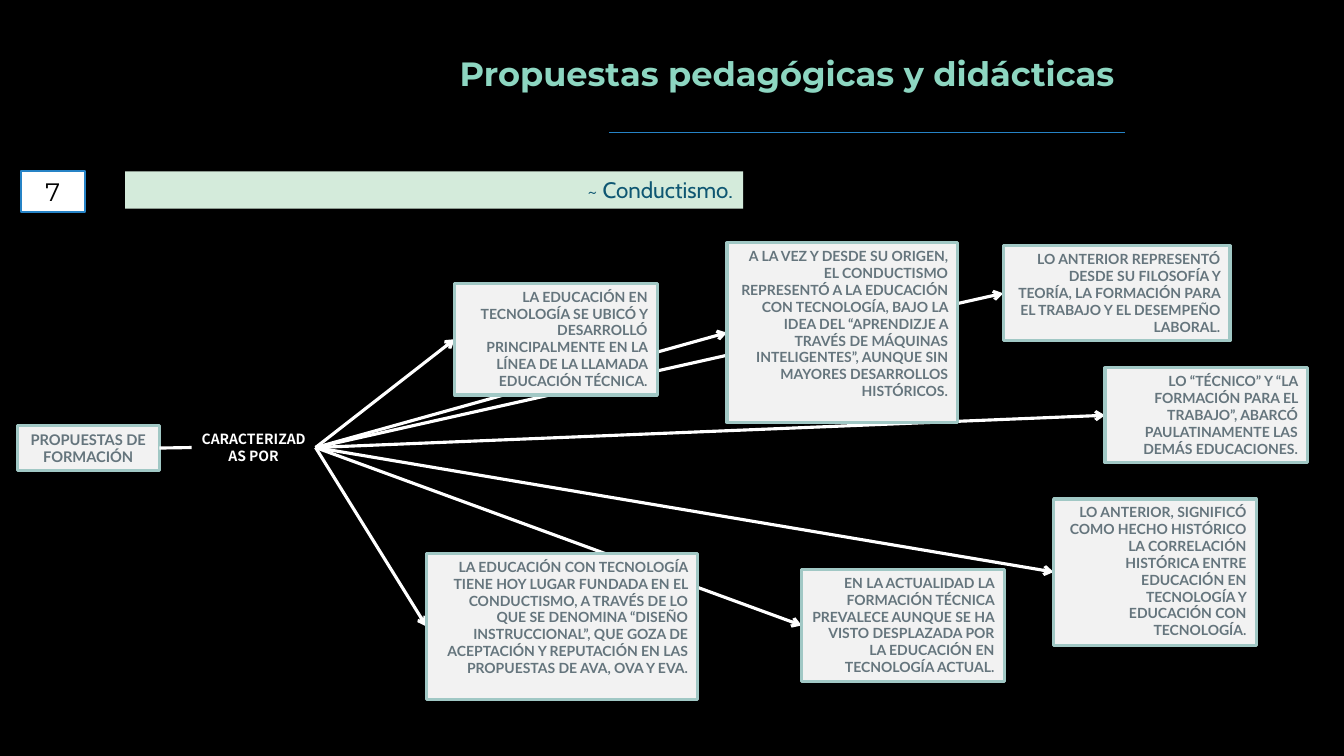
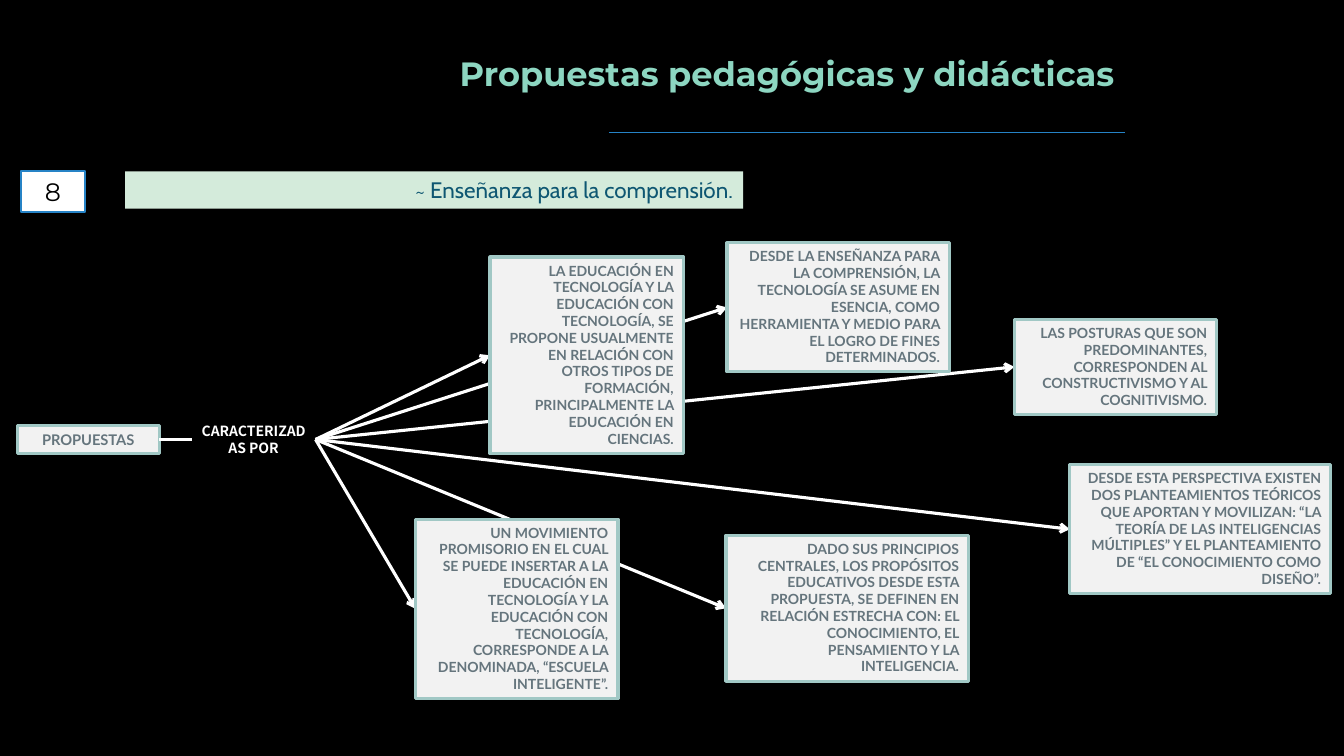
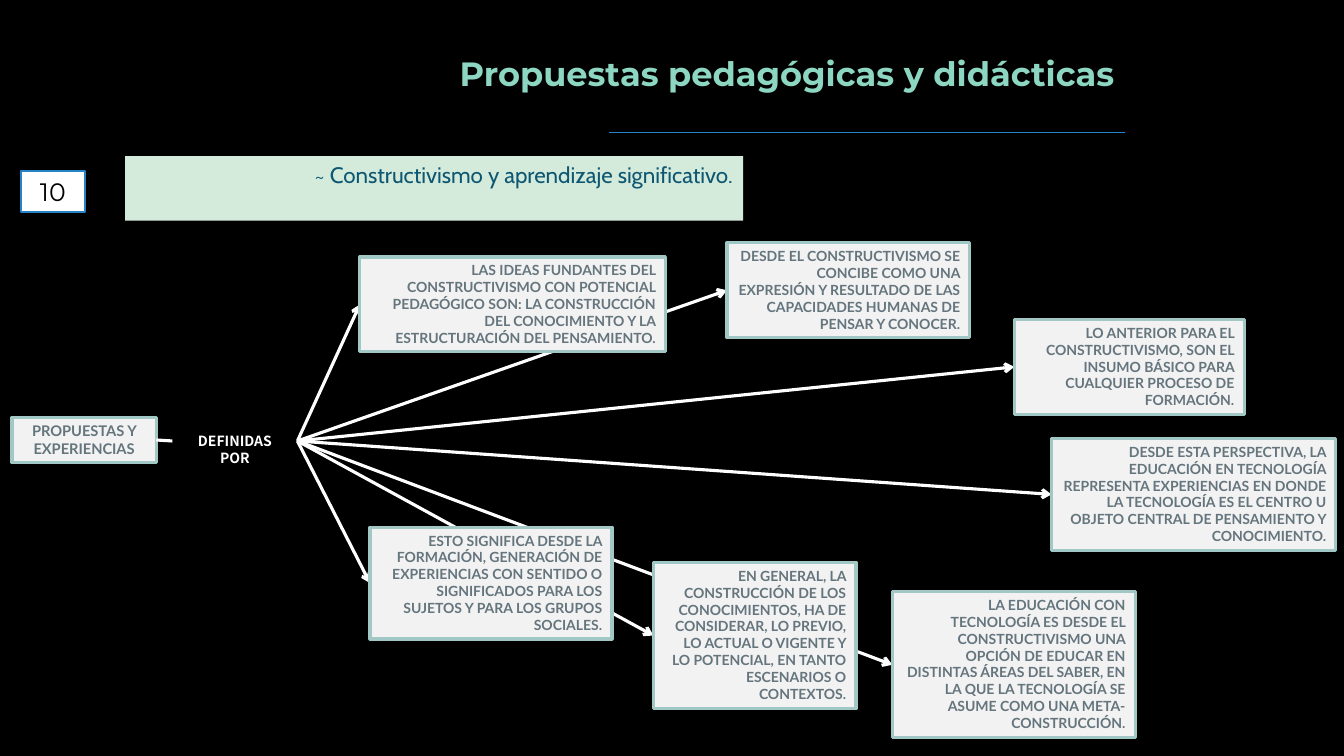
from dataclasses import dataclass
from typing import Optional

from lxml.etree import SubElement
from pptx import Presentation
from pptx.dml.color import RGBColor
from pptx.enum.shapes import MSO_CONNECTOR as Connector, MSO_SHAPE as Preset
from pptx.enum.text import MSO_ANCHOR as Anchor, PP_ALIGN as Align
from pptx.oxml.ns import qn
from pptx.util import Inches, Pt

COLORS = {
    "background": "000000", "title": "8DD6C1", "accent": "2683C6",
    "banner": "D4EBDB", "banner_text": "0E5772", "white": "FFFFFF",
    "black": "000000", "card": "F2F2F2", "card_line": "A1C8C5",
    "card_text": "65757D",
}


@dataclass(frozen=True)
class Box:
    left: float
    top: float
    width: float
    height: float


@dataclass(frozen=True)
class TextStyle:
    font: str
    size: float
    color: str
    bold: bool = False
    align: Align = Align.RIGHT
    leading: Optional[float] = None


@dataclass(frozen=True)
class Look:
    fill: str
    line: Optional[str] = None
    weight: float = 0


@dataclass(frozen=True)
class Label:
    text: str
    box: Box


@dataclass(frozen=True)
class MapSlide:
    number: str
    banner: Label
    root: Label
    hub: Label
    cards: tuple[Label, ...]


TITLE = Label("Propuestas pedagógicas y didácticas", Box(2.12, 0.48, 9.03, 0.5))
NUMBER_BOX = Box(0.21, 1.7, 0.63, 0.4)
BANNER_BOX = Box(1.24, 1.7, 6.13, 0.37)

TITLE_STYLE = TextStyle("Montserrat", 24, "title", True)
BANNER_STYLE = TextStyle("Cabin", 16, "banner_text")
NUMBER_STYLE = TextStyle("Montserrat", 18, "black", align=Align.CENTER)
ROOT_STYLE = TextStyle("Lato", 10.5, "card_text", True, Align.CENTER)
CARD_STYLE = TextStyle("Lato", 10, "card_text", True)
HUB_STYLE = TextStyle("Noto Sans CJK SC", 10, "white", True, Align.CENTER, 12)

BANNER_LOOK = Look("banner")
NUMBER_LOOK = Look("white", "accent", 1.5)
CARD_LOOK = Look("card", "card_line", 2.25)

SLIDES = (
    MapSlide(
        "7",
        Label("~ Conductismo.", BANNER_BOX),
        Label("PROPUESTAS DE FORMACIÓN", Box(0.17, 4.22, 1.41, 0.45)),
        Label("CARACTERIZADAS POR", Box(1.9, 4.22, 1.23, 0.44)),
        (
            Label("LA EDUCACIÓN EN TECNOLOGÍA SE UBICÓ Y DESARROLLÓ PRINCIPALMENTE "
                  "EN LA LÍNEA DE LA LLAMADA EDUCACIÓN TÉCNICA.",
                  Box(4.51, 2.81, 2.01, 1.11)),
            Label("A LA VEZ Y DESDE SU ORIGEN, EL CONDUCTISMO REPRESENTÓ A LA "
                  "EDUCACIÓN CON TECNOLOGÍA, BAJO LA IDEA DEL “APRENDIZJE A TRAVÉS "
                  "DE MÁQUINAS INTELIGENTES”, AUNQUE SIN MAYORES DESARROLLOS "
                  "HISTÓRICOS.", Box(7.21, 2.41, 2.29, 1.78)),
            Label("LO ANTERIOR REPRESENTÓ DESDE SU FILOSOFÍA Y TEORÍA, LA FORMACIÓN "
                  "PARA EL TRABAJO Y EL DESEMPEÑO LABORAL.",
                  Box(9.95, 2.44, 2.25, 0.94)),
            Label("LO “TÉCNICO” Y “LA FORMACIÓN PARA EL TRABAJO”, ABARCÓ "
                  "PAULATINAMENTE LAS DEMÁS EDUCACIONES.",
                  Box(10.96, 3.65, 2.01, 0.94)),
            Label("LO ANTERIOR, SIGNIFICÓ COMO HECHO HISTÓRICO LA CORRELACIÓN "
                  "HISTÓRICA ENTRE EDUCACIÓN EN TECNOLOGÍA Y EDUCACIÓN CON "
                  "TECNOLOGÍA.", Box(10.45, 4.95, 2.01, 1.45)),
            Label("EN LA ACTUALIDAD LA FORMACIÓN TÉCNICA PREVALECE AUNQUE SE HA "
                  "VISTO DESPLAZADA POR LA EDUCACIÓN EN TECNOLOGÍA ACTUAL.",
                  Box(7.95, 5.65, 2.01, 1.11)),
            Label("LA EDUCACIÓN CON TECNOLOGÍA TIENE HOY LUGAR FUNDADA EN EL "
                  "CONDUCTISMO, A TRAVÉS DE LO QUE SE DENOMINA “DISEÑO "
                  "INSTRUCCIONAL”, QUE GOZA DE ACEPTACIÓN Y REPUTACIÓN EN LAS "
                  "PROPUESTAS DE AVA, OVA Y EVA.", Box(4.23, 5.49, 2.69, 1.45)),
        ),
    ),
    MapSlide(
        "8",
        Label("~ Enseñanza para la comprensión.", BANNER_BOX),
        Label("PROPUESTAS", Box(0.17, 4.22, 1.41, 0.28)),
        Label("CARACTERIZADAS POR", Box(1.9, 4.14, 1.23, 0.44)),
        (
            Label("LA EDUCACIÓN EN TECNOLOGÍA Y LA EDUCACIÓN CON TECNOLOGÍA, SE "
                  "PROPONE USUALMENTE EN RELACIÓN CON OTROS TIPOS DE FORMACIÓN, "
                  "PRINCIPALMENTE LA EDUCACIÓN EN CIENCIAS.",
                  Box(4.86, 2.55, 1.92, 1.95)),
            Label("DESDE LA ENSEÑANZA PARA LA COMPRENSIÓN, LA TECNOLOGÍA SE ASUME "
                  "EN ESENCIA, COMO HERRAMIENTA Y MEDIO PARA EL LOGRO DE FINES "
                  "DETERMINADOS.", Box(7.21, 2.41, 2.21, 1.28)),
            Label("LAS POSTURAS QUE SON PREDOMINANTES, CORRESPONDEN AL "
                  "CONSTRUCTIVISMO Y AL COGNITIVISMO.",
                  Box(10.06, 3.17, 2.01, 0.94)),
            Label("DESDE ESTA PERSPECTIVA EXISTEN DOS PLANTEAMIENTOS TEÓRICOS QUE "
                  "APORTAN Y MOVILIZAN: “LA TEORÍA DE LAS INTELIGENCIAS MÚLTIPLES” "
                  "Y EL PLANTEAMIENTO DE “EL CONOCIMIENTO COMO DISEÑO”.",
                  Box(10.61, 4.61, 2.59, 1.28)),
            Label("UN MOVIMIENTO PROMISORIO EN EL CUAL SE PUEDE INSERTAR A LA "
                  "EDUCACIÓN EN TECNOLOGÍA Y LA EDUCACIÓN CON TECNOLOGÍA, "
                  "CORRESPONDE A LA DENOMINADA, “ESCUELA INTELIGENTE”.",
                  Box(4.12, 5.15, 2.01, 1.78)),
            Label("DADO SUS PRINCIPIOS CENTRALES, LOS PROPÓSITOS EDUCATIVOS DESDE "
                  "ESTA PROPUESTA, SE DEFINEN EN RELACIÓN ESTRECHA CON: EL "
                  "CONOCIMIENTO, EL PENSAMIENTO Y LA INTELIGENCIA.",
                  Box(7.2, 5.31, 2.41, 1.45)),
        ),
    ),
    MapSlide(
        "10",
        Label("~ Constructivismo y aprendizaje significativo.",
              Box(1.24, 1.55, 6.13, 0.64)),
        Label("PROPUESTAS Y EXPERIENCIAS", Box(0.12, 4.14, 1.43, 0.45)),
        Label("DEFINIDAS POR", Box(1.71, 4.24, 1.24, 0.27)),
        (
            Label("LAS IDEAS FUNDANTES DEL CONSTRUCTIVISMO CON POTENCIAL PEDAGÓGICO "
                  "SON: LA CONSTRUCCIÓN DEL CONOCIMIENTO Y LA ESTRUCTURACIÓN DEL "
                  "PENSAMIENTO.", Box(3.57, 2.55, 3.03, 0.94)),
            Label("DESDE EL CONSTRUCTIVISMO SE CONCIBE COMO UNA EXPRESIÓN Y "
                  "RESULTADO DE LAS CAPACIDADES HUMANAS DE PENSAR Y CONOCER.",
                  Box(7.21, 2.41, 2.41, 0.94)),
            Label("LO ANTERIOR PARA EL CONSTRUCTIVISMO, SON EL INSUMO BÁSICO PARA "
                  "CUALQUIER PROCESO DE FORMACIÓN.", Box(10.06, 3.17, 2.28, 0.94)),
            Label("DESDE ESTA PERSPECTIVA, LA EDUCACIÓN EN TECNOLOGÍA REPRESENTA "
                  "EXPERIENCIAS EN DONDE LA TECNOLOGÍA ES EL CENTRO U OBJETO "
                  "CENTRAL DE PENSAMIENTO Y CONOCIMIENTO.",
                  Box(10.43, 4.35, 2.82, 1.11)),
            Label("EN GENERAL, LA CONSTRUCCIÓN DE LOS CONOCIMIENTOS, HA DE "
                  "CONSIDERAR, LO PREVIO, LO ACTUAL O VIGENTE Y LO POTENCIAL, EN "
                  "TANTO ESCENARIOS O CONTEXTOS.", Box(6.48, 5.58, 2.01, 1.45)),
            Label("LA EDUCACIÓN CON TECNOLOGÍA ES DESDE EL CONSTRUCTIVISMO UNA "
                  "OPCIÓN DE EDUCAR EN DISTINTAS ÁREAS DEL SABER, EN LA QUE LA "
                  "TECNOLOGÍA SE ASUME COMO UNA META-CONSTRUCCIÓN.",
                  Box(8.85, 5.87, 2.41, 1.45)),
            Label("ESTO SIGNIFICA DESDE LA FORMACIÓN, GENERACIÓN DE EXPERIENCIAS "
                  "CON SENTIDO O SIGNIFICADOS PARA LOS SUJETOS Y PARA LOS GRUPOS "
                  "SOCIALES.", Box(3.67, 5.23, 2.4, 1.11)),
        ),
    ),
)


def color(name: str) -> RGBColor:
    return RGBColor.from_string(COLORS[name])


def add_label(page, label: Label, style: TextStyle, look: Optional[Look] = None):
    """Draw a text box, or a rectangle when a look is given."""
    box = label.box
    place = [Inches(n) for n in (box.left, box.top, box.width, box.height)]
    if look is None:
        shape = page.shapes.add_textbox(*place)
    else:
        shape = page.shapes.add_shape(Preset.RECTANGLE, *place)
        shape.shadow.inherit = False
        shape.fill.solid()
        shape.fill.fore_color.rgb = color(look.fill)
        if look.line:
            shape.line.color.rgb = color(look.line)
            shape.line.width = Pt(look.weight)
        else:
            shape.line.fill.background()
    frame = shape.text_frame
    frame.word_wrap = True
    frame.vertical_anchor = Anchor.TOP
    para = frame.paragraphs[0]
    para.alignment = style.align
    if style.leading:
        para.line_spacing = Pt(style.leading)
    span = para.add_run()
    span.text = label.text
    formats = {"name": style.font, "size": Pt(style.size), "bold": style.bold}
    for key, value in formats.items():
        setattr(span.font, key, value)
    span.font.color.rgb = color(style.color)
    return shape


def add_line(page, start: tuple[float, float], end: tuple[float, float],
             line_color: str = "white", weight: float = 2.25, arrow: bool = False):
    line = page.shapes.add_connector(
        Connector.STRAIGHT, *(Inches(n) for n in (*start, *end)))
    line.line.color.rgb = color(line_color)
    line.line.width = Pt(weight)
    if arrow:
        SubElement(line.line._get_or_add_ln(), qn("a:tailEnd"), type="arrow")
    SubElement(line._element.spPr, qn("a:effectLst"))
    return line


def side_middle(box: Box, right: bool = False) -> tuple[float, float]:
    return box.left + box.width * right, box.top + box.height / 2


def add_frame(page, content: MapSlide) -> None:
    """Background, title, rule, banner and number."""
    page.background.fill.solid()
    page.background.fill.fore_color.rgb = color("background")
    add_label(page, TITLE, TITLE_STYLE)
    add_line(page, (11.16, 1.31), (6.04, 1.31), "accent", 0.75)
    add_label(page, content.banner, BANNER_STYLE, BANNER_LOOK)
    add_label(page, Label(content.number, NUMBER_BOX), NUMBER_STYLE, NUMBER_LOOK)


def add_map(page, content: MapSlide) -> None:
    """Root, hub and cards; the arrows lie behind every card."""
    hub = add_label(page, content.hub, HUB_STYLE)
    root = add_label(page, content.root, ROOT_STYLE, CARD_LOOK)
    hub_box = content.hub.box
    link = add_line(page, side_middle(content.root.box, right=True),
                    side_middle(hub_box))
    link.begin_connect(root, 3)
    link.end_connect(hub, 1)

    arrows = [add_line(page, side_middle(hub_box, right=True),
                       side_middle(card.box), arrow=True)
              for card in content.cards]
    for arrow, card in zip(arrows, content.cards):
        arrow.begin_connect(hub, 3)
        arrow.end_connect(add_label(page, card, CARD_STYLE, CARD_LOOK), 1)


def main() -> None:
    deck = Presentation()
    deck.slide_width, deck.slide_height = Inches(13.33), Inches(7.5)
    for content in SLIDES:
        page = deck.slides.add_slide(deck.slide_layouts[6])
        add_frame(page, content)
        add_map(page, content)
    deck.save("out.pptx")


if __name__ == "__main__":
    main()
